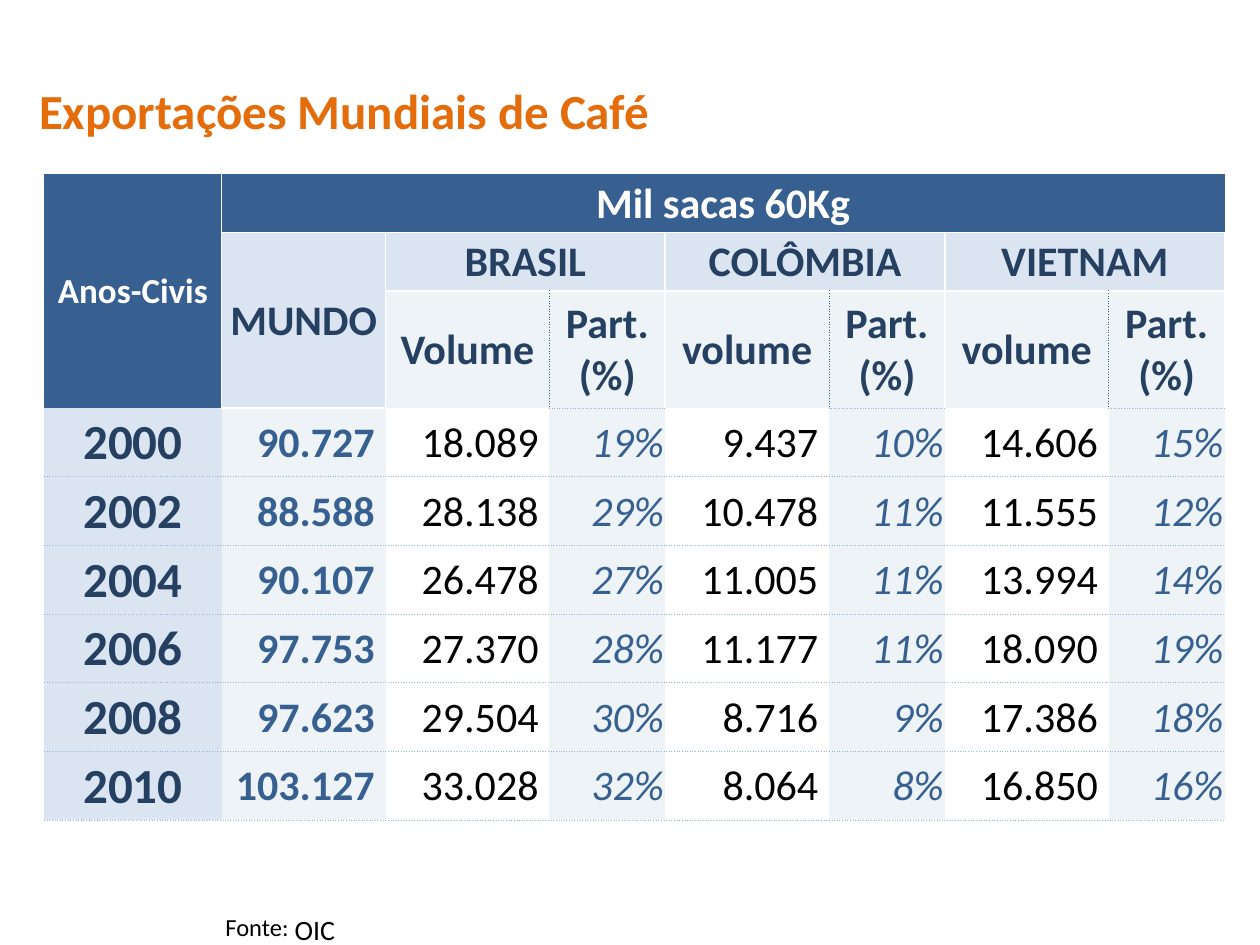
from dataclasses import dataclass, field

from lxml import etree
from pptx import Presentation
from pptx import util as u
from pptx.dml.color import RGBColor
from pptx.enum import text
from pptx.oxml.ns import qn

WHITE = RGBColor(0xFF, 0xFF, 0xFF)
BLACK = RGBColor(0x00, 0x00, 0x00)
ORANGE = RGBColor(0xE4, 0x6C, 0x0A)
BLUE = RGBColor(0x37, 0x60, 0x91)
NAVY = RGBColor(0x25, 0x40, 0x61)
PALE = RGBColor(0xDB, 0xE5, 0xF1)
MIST = RGBColor(0xEE, 0xF3, 0xF8)
DOT_BLUE = RGBColor(0x95, 0xB3, 0xD7)

FONT = "Calibri"
NO_STYLE_NO_GRID = "{2D5ABB26-0587-4C30-8999-92F81FD0307C}"
CENTER, RIGHT = text.PP_ALIGN.CENTER, text.PP_ALIGN.RIGHT

SLIDE_WIDTH, SLIDE_HEIGHT = u.Inches(10), u.Inches(7.5)
YEAR_WIDTH, VOLUME_WIDTH, SHARE_WIDTH = 1.41, 1.3, 0.92
COLUMN_WIDTHS = [YEAR_WIDTH, VOLUME_WIDTH] + [VOLUME_WIDTH, SHARE_WIDTH] * 3
HEADER_HEIGHT, DATA_HEIGHT = 0.465, 0.545
HEADER_ROWS = 3


@dataclass(frozen=True)
class Line:
    color: RGBColor
    width: float
    dash: str = "solid"


SOLID = Line(WHITE, 1)
DOTTED = Line(DOT_BLUE, 0.5, "dot")
DIVIDER = Line(BLUE, 0.5, "dot")


@dataclass(frozen=True)
class CellStyle:
    """Borders are keyed L, R, T, B."""
    fill: RGBColor | None
    color: RGBColor
    size: int = 24
    bold: bool = True
    italic: bool = False
    align: text.PP_ALIGN = CENTER
    borders: dict[str, Line] = field(default_factory=dict)


@dataclass(frozen=True)
class HeaderCell:
    row: int
    column: int
    label: str
    style: CellStyle
    rows: int = 1
    columns: int = 1


@dataclass(frozen=True)
class Caption:
    """Place and size are shares of the slide."""
    label: str
    left: float
    top: float
    width: float
    height: float
    size: int
    color: RGBColor = BLACK
    bold: bool = False


TITLE = Caption("Exportações Mundiais de Café", 0.021, 0.079, 0.51, 0.076, 28, ORANGE, True)
SOURCES = [
    Caption("Fonte:", 0.169, 0.959, 0.071, 0.045, 14),
    Caption("OIC", 0.224, 0.959, 0.053, 0.049, 16),
]

GROUP = CellStyle(PALE, NAVY, borders={"L": SOLID, "R": SOLID, "T": SOLID})
VOLUME_HEAD = CellStyle(MIST, NAVY, borders={"L": SOLID, "R": DIVIDER})
SHARE_HEAD = CellStyle(MIST, NAVY, borders={"L": DIVIDER, "R": SOLID, "B": DOTTED})
HEADERS = [
    HeaderCell(0, 0, "Anos-Civis", CellStyle(BLUE, WHITE, 20, borders={"R": SOLID}), rows=3),
    HeaderCell(0, 1, "Mil sacas 60Kg",
               CellStyle(BLUE, WHITE, borders={"L": SOLID, "B": SOLID}), columns=7),
    HeaderCell(1, 1, "MUNDO", GROUP, rows=2),
]
for start, country, volume_label in [
    (2, "BRASIL", "Volume"), (4, "COLÔMBIA", "volume"), (6, "VIETNAM", "volume"),
]:
    HEADERS += [
        HeaderCell(1, start, country, GROUP, columns=2),
        HeaderCell(2, start, volume_label, VOLUME_HEAD),
        HeaderCell(2, start + 1, "Part.\v(%)", SHARE_HEAD),
    ]

RULED = {"T": DOTTED, "B": DOTTED}
YEAR = CellStyle(PALE, NAVY, 28, borders=RULED)
WORLD = CellStyle(MIST, BLUE, align=RIGHT, borders=RULED)
VOLUME = CellStyle(None, BLACK, bold=False, align=RIGHT, borders=RULED)
SHARE = CellStyle(MIST, BLUE, bold=False, italic=True, align=RIGHT, borders=RULED)
DATA_STYLES = [YEAR, WORLD] + [VOLUME, SHARE] * 3
DATA = [
    ("2000", "90.727 ", "18.089 ", "19%", "9.437 ", "10%", "14.606 ", "15%"),
    ("2002", "88.588 ", "28.138 ", "29%", "10.478 ", "11%", "11.555 ", "12%"),
    ("2004", "90.107 ", "26.478 ", "27%", "11.005 ", "11%", "13.994 ", "14%"),
    ("2006", "97.753 ", "27.370 ", "28%", "11.177 ", "11%", "18.090 ", "19%"),
    ("2008", "97.623 ", "29.504 ", "30%", "8.716 ", "9%", "17.386 ", "18%"),
    ("2010", "103.127 ", "33.028 ", "32%", "8.064 ", "8%", "16.850 ", "16%"),
]


def set_attributes(target, values: dict) -> None:
    for name, value in values.items():
        setattr(target, name, value)


def format_font(font, size: int, color: RGBColor, bold: bool, italic: bool = False) -> None:
    set_attributes(font, {"name": FONT, "size": u.Pt(size), "bold": bold, "italic": italic})
    font.color.rgb = color


def write_caption(shape, caption: Caption) -> None:
    set_attributes(shape, {
        "left": int(SLIDE_WIDTH * caption.left), "top": int(SLIDE_HEIGHT * caption.top),
        "width": int(SLIDE_WIDTH * caption.width), "height": int(SLIDE_HEIGHT * caption.height),
    })
    frame = shape.text_frame
    frame.text = caption.label
    set_attributes(frame, {
        "word_wrap": False,
        "auto_size": text.MSO_AUTO_SIZE.SHAPE_TO_FIT_TEXT,
        "vertical_anchor": text.MSO_ANCHOR.TOP,
    })
    paragraph = frame.paragraphs[0]
    paragraph.alignment = text.PP_ALIGN.LEFT
    format_font(paragraph.runs[0].font, caption.size, caption.color, caption.bold)


def add_borders(cell, borders: dict[str, Line]) -> None:
    properties = cell._tc.get_or_add_tcPr()
    sides = [side for side in "LRTB" if side in borders]
    for position, side in enumerate(sides):
        line = borders[side]
        element = etree.Element(qn(f"a:ln{side}"), w=str(u.Pt(line.width)))
        fill = etree.SubElement(element, qn("a:solidFill"))
        etree.SubElement(fill, qn("a:srgbClr"), val=str(line.color))
        etree.SubElement(element, qn("a:prstDash"), val=line.dash)
        properties.insert(position, element)


def write_cell(cell, label: str, style: CellStyle) -> None:
    cell.text = label
    set_attributes(cell, {
        "vertical_anchor": text.MSO_ANCHOR.MIDDLE, "margin_left": u.Inches(0.01),
        "margin_right": u.Inches(0.01), "margin_top": u.Inches(0.01), "margin_bottom": 0,
    })
    if style.fill is None:
        cell.fill.background()
    else:
        cell.fill.solid()
        cell.fill.fore_color.rgb = style.fill
    paragraph = cell.text_frame.paragraphs[0]
    paragraph.alignment = style.align
    for run in paragraph.runs:
        format_font(run.font, style.size, style.color, style.bold, style.italic)
    add_borders(cell, style.borders)


def add_export_table(slide) -> None:
    heights = [HEADER_HEIGHT, HEADER_HEIGHT, 2 * HEADER_HEIGHT] + [DATA_HEIGHT] * len(DATA)
    table = slide.shapes.add_table(
        len(heights), len(COLUMN_WIDTHS), u.Inches(0.35), u.Inches(1.38),
        u.Inches(sum(COLUMN_WIDTHS)), u.Inches(sum(heights))).table
    set_attributes(table, {"first_row": False, "horz_banding": False})
    table._tbl.tblPr.find(qn("a:tableStyleId")).text = NO_STYLE_NO_GRID
    for column, width in zip(table.columns, COLUMN_WIDTHS):
        column.width = u.Inches(width)
    for row, height in zip(table.rows, heights):
        row.height = u.Inches(height)

    for header in HEADERS:
        cell = table.cell(header.row, header.column)
        if header.rows * header.columns > 1:
            cell.merge(table.cell(header.row + header.rows - 1,
                                  header.column + header.columns - 1))
        write_cell(cell, header.label, header.style)
    for row, values in enumerate(DATA, HEADER_ROWS):
        for column, (value, style) in enumerate(zip(values, DATA_STYLES)):
            if row == HEADER_ROWS and style in (YEAR, WORLD, VOLUME):
                style = CellStyle(style.fill, style.color, style.size, style.bold,
                                  align=style.align, borders={"B": DOTTED})
            write_cell(table.cell(row, column), value, style)


def main() -> None:
    presentation = Presentation()
    set_attributes(presentation, {"slide_width": SLIDE_WIDTH, "slide_height": SLIDE_HEIGHT})
    slide = presentation.slides.add_slide(presentation.slide_layouts.get_by_name("Title Only"))
    write_caption(slide.shapes.title, TITLE)
    for source in SOURCES:
        write_caption(slide.shapes.add_textbox(0, 0, 0, 0), source)
    add_export_table(slide)
    presentation.save("out.pptx")


if __name__ == "__main__":
    main()
